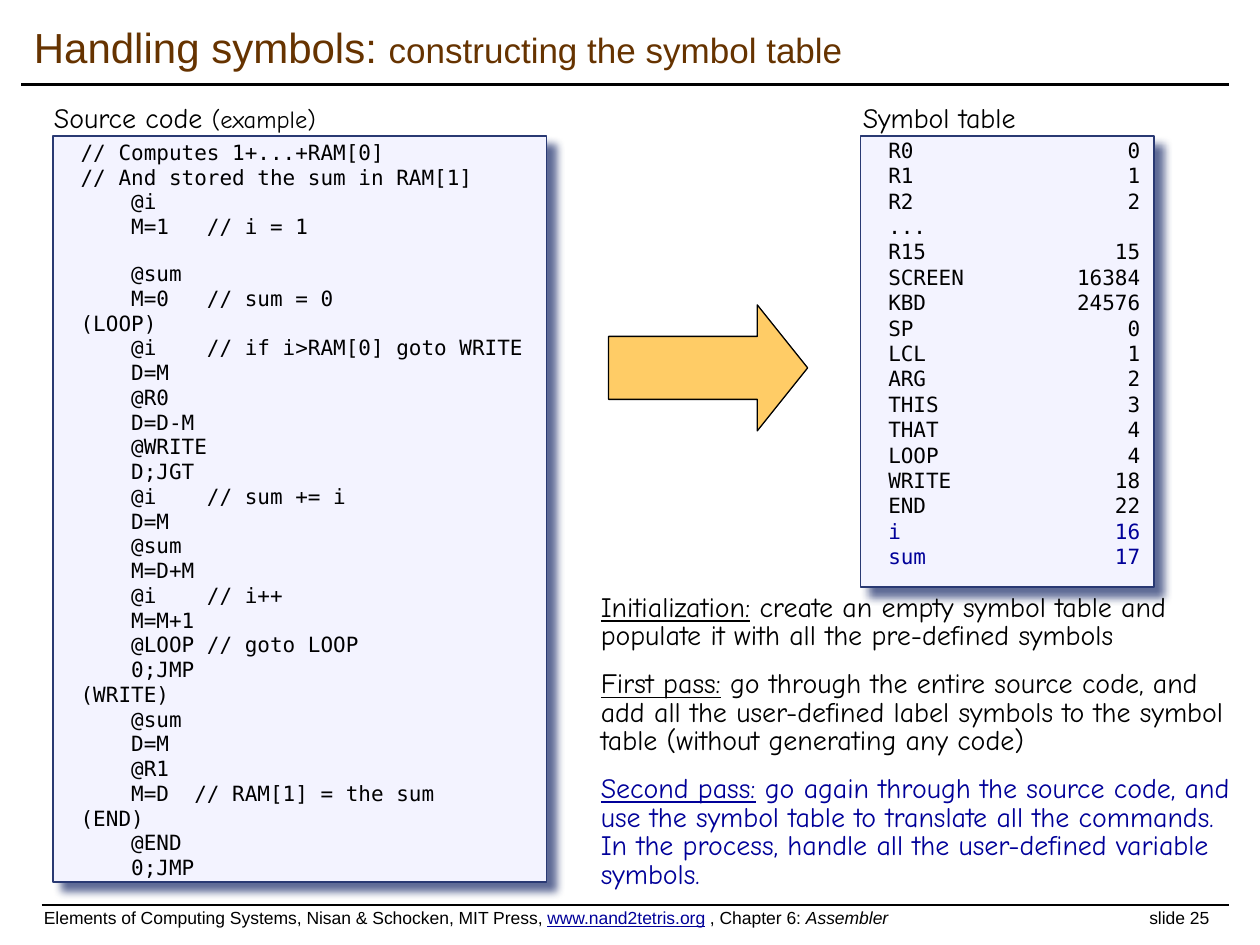
from lxml import etree
from pptx import Presentation
from pptx import util as u
from pptx.dml.color import RGBColor
from pptx.enum import shapes, text
from pptx.oxml import ns

INK, NAVY, BROWN = "000000", "000099", "663300"
SANS, HAND, MONO = "Arial", "Comic Neue", "DejaVu Sans Mono"

CODE = """// Computes 1+...+RAM[0]
// And stored the sum in RAM[1]
    @i
    M=1   // i = 1

    @sum
    M=0   // sum = 0
(LOOP)
    @i    // if i>RAM[0] goto WRITE
    D=M
    @R0
    D=D-M
    @WRITE
    D;JGT
    @i    // sum += i
    D=M
    @sum
    M=D+M
    @i    // i++
    M=M+1
    @LOOP // goto LOOP
    0;JMP
(WRITE)
    @sum
    D=M
    @R1
    M=D  // RAM[1] = the sum
(END)
    @END
    0;JMP"""

SYMBOLS = [
    ("R0", 0), ("R1", 1), ("R2", 2), ("...", ""), ("R15", 15),
    ("SCREEN", 16384), ("KBD", 24576), ("SP", 0), ("LCL", 1), ("ARG", 2),
    ("THIS", 3), ("THAT", 4), ("LOOP", 4), ("WRITE", 18), ("END", 22),
    ("i", 16), ("sum", 17),
]
VARIABLES = ("i", "sum")

STEPS = [
    ("Initialization:", " create an empty symbol table and populate it with "
     "all the pre-defined symbols", INK),
    ("First pass:", " go through the entire source code, and add all the "
     "user-defined label symbols to the symbol table (without generating "
     "any code)", INK),
    ("Second pass:", " go again through the source code, and use the symbol "
     "table to translate all the commands. In the process, handle all the "
     "user-defined variable symbols.", NAVY),
]


def color(code):
    return RGBColor.from_string(code)


def sub(parent, tag, **attrs):
    node = etree.SubElement(parent, ns.qn(tag))
    for key, val in attrs.items():
        node.set(key, str(val))
    return node


def right_tab(para, pos):
    tabs = sub(para._p.get_or_add_pPr(), "a:tabLst")
    sub(tabs, "a:tab", pos=u.Inches(pos), algn="r")


def style(para, name, size, ink=INK):
    para.font.name = name
    para.font.size = u.Pt(size)
    para.font.color.rgb = color(ink)


def add_run(para, words):
    run = para.add_run()
    run.text = words
    return run


def next_para(frame, index):
    return frame.add_paragraph() if index else frame.paragraphs[0]


def text_box(slide, box):
    frame = slide.shapes.add_textbox(*map(u.Inches, box)).text_frame
    frame.word_wrap = True
    return frame


def block(slide, kind, box, fill, edge):
    shape = slide.shapes.add_shape(kind, *map(u.Inches, box))
    shape.shadow.inherit = False
    shape.fill.solid()
    shape.fill.fore_color.rgb = color(fill)
    shape.line.color.rgb = color(edge)
    shape.line.width = u.Pt(0.75)
    return shape


def panel(slide, box):
    """Listing panel with a soft shadow; returns its text frame."""
    shape = block(slide, shapes.MSO_SHAPE.RECTANGLE, box, "F3F3FF", "293973")
    effects = shape._element.spPr.find(ns.qn("a:effectLst"))
    shadow = sub(effects, "a:outerShdw", blurRad=u.Pt(5), dist=u.Pt(7.1),
                 dir=45 * 60000, algn="ctr", rotWithShape=0)
    tint = sub(shadow, "a:srgbClr", val="293973")
    sub(tint, "a:alpha", val=75000)
    frame = shape.text_frame
    frame.word_wrap = True
    frame.vertical_anchor = text.MSO_ANCHOR.TOP
    frame.margin_left, frame.margin_right = u.Inches(0.22), 0
    return frame


def rule(slide, left, right, y, width):
    line = slide.shapes.add_connector(
        shapes.MSO_CONNECTOR.STRAIGHT,
        *map(u.Inches, (left, y, right, y)))
    line.line.color.rgb = color(INK)
    line.line.width = u.Pt(width)
    sub(line._element.spPr, "a:effectLst")


def title(slide, box):
    frame = text_box(slide, box)
    frame.vertical_anchor = text.MSO_ANCHOR.MIDDLE
    para = frame.paragraphs[0]
    style(para, SANS, 24, BROWN)
    add_run(para, "Handling symbols: ")
    add_run(para, "constructing the symbol table").font.size = u.Pt(20)


def label(slide, box, words, note=""):
    para = text_box(slide, box).paragraphs[0]
    style(para, HAND, 16)
    add_run(para, words)
    if note:
        add_run(para, note).font.size = u.Pt(14)


def source_code(slide, box):
    frame = panel(slide, box)
    lines = CODE.split("\n")
    shown = [i for i, line in enumerate(lines) if line]
    for n, i in enumerate(shown):
        para = next_para(frame, n)
        para.alignment = text.PP_ALIGN.LEFT
        para.line_spacing = 0.9
        if n:  # a wider gap stands for the empty line of code
            para.space_before = u.Pt(1.2 if lines[i - 1] else 13.8)
        style(para, MONO, 12)
        add_run(para, lines[i])


def symbol_table(slide, box):
    frame = panel(slide, box)
    for n, (name, value) in enumerate(SYMBOLS):
        para = next_para(frame, n)
        right_tab(para, 2)
        para.alignment = text.PP_ALIGN.LEFT
        para.line_spacing = 0.8
        if n:
            para.space_before = u.Pt(3)
        style(para, MONO, 12, NAVY if name in VARIABLES else INK)
        add_run(para, f"{name}\t{value}" if value != "" else name)


def arrow(slide, box):
    shape = block(slide, shapes.MSO_SHAPE.RIGHT_ARROW, box, "FFCC66", INK)
    shape.adjustments[0], shape.adjustments[1] = 0.5, 0.4


def passes(slide, box):
    frame = text_box(slide, box)
    for n, (head, body, ink) in enumerate(STEPS):
        para = next_para(frame, n)
        para.line_spacing = 0.85
        para.space_after = u.Pt(11)
        style(para, HAND, 16, ink)
        add_run(para, head).font.underline = True
        add_run(para, body)


def footer(slide, box):
    frame = text_box(slide, box)
    frame.margin_top = frame.margin_bottom = 0
    para = frame.paragraphs[0]
    right_tab(para, 9.25)
    style(para, SANS, 10)
    add_run(para, "Elements of Computing Systems, Nisan & Schocken, MIT Press, ")
    site = add_run(para, "www.nand2tetris.org").font
    site.underline = True
    site.color.rgb = color(NAVY)
    add_run(para, " , Chapter 6: ")
    add_run(para, "Assembler").font.italic = True
    add_run(para, "\tslide 25")


def main():
    deck = Presentation()
    deck.slide_width, deck.slide_height = u.Inches(10), u.Inches(7.5)
    slide = deck.slides.add_slide(deck.slide_layouts[6])
    # Frame of the page
    rule(slide, 0.17, 9.75, 0.67, 2)
    rule(slide, 0.33, 9.75, 7.18, 1)
    footer(slide, (0.25, 7.2, 9.5, 0.27))
    title(slide, (0.17, 0.08, 9.58, 0.58))
    # Listings, with the arrow between them
    symbol_table(slide, (6.83, 1.08, 2.33, 3.58))
    label(slide, (6.75, 0.75, 2.07, 0.42), "Symbol table")
    source_code(slide, (0.42, 1.08, 3.92, 5.92))
    label(slide, (0.33, 0.75, 3.32, 0.42), "Source code ", "(example)")
    arrow(slide, (4.83, 2.42, 1.58, 1))
    # Explanation
    passes(slide, (4.67, 4.67, 5.25, 2.5))
    deck.save("out.pptx")


if __name__ == "__main__":
    main()
